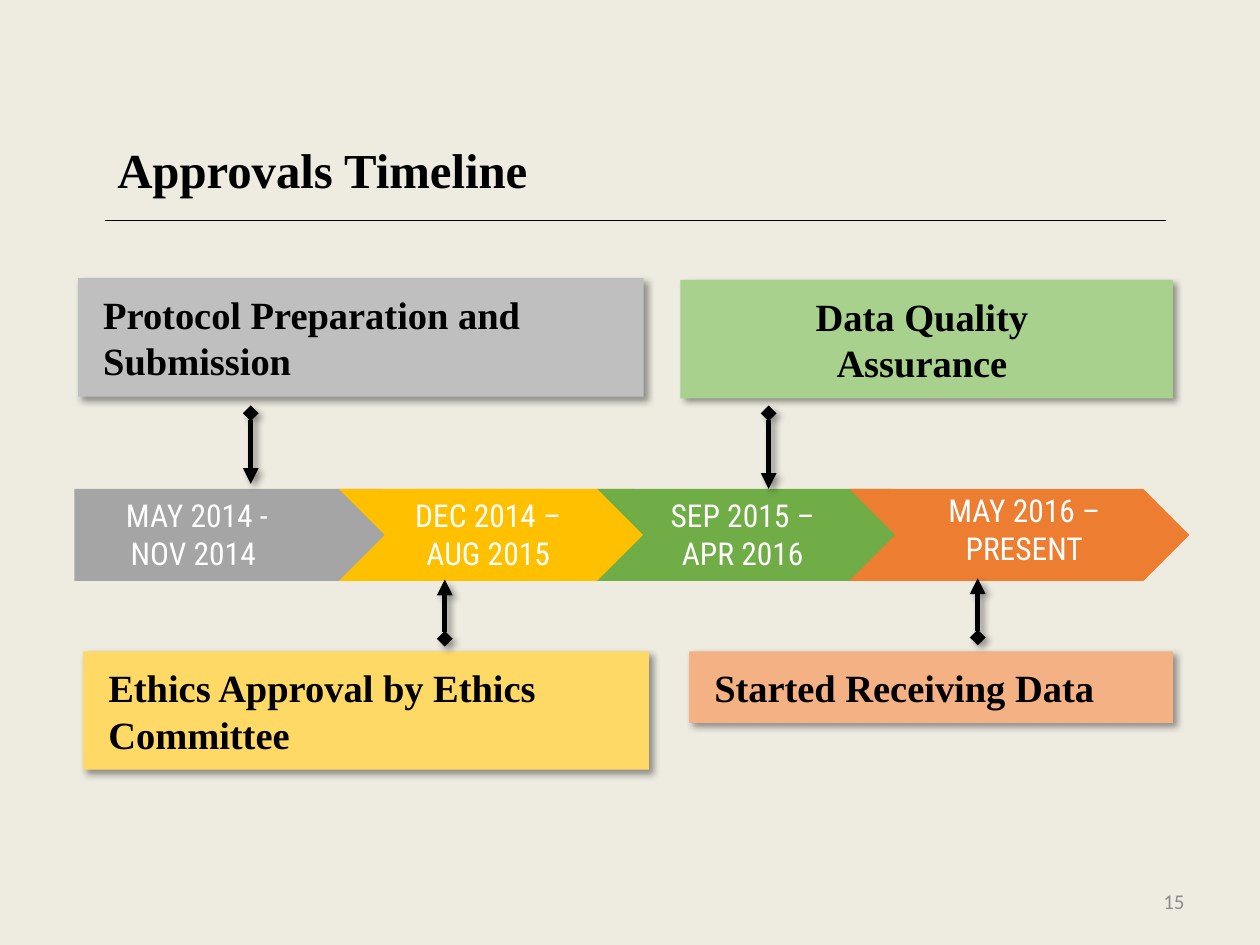
from typing import NamedTuple

from lxml.etree import SubElement
from pptx import Presentation
from pptx.dml.color import RGBColor
from pptx.enum.shapes import MSO_CONNECTOR as Connector, MSO_SHAPE as Preset
from pptx.enum.text import MSO_ANCHOR as Anchor, MSO_AUTO_SIZE as AutoSize, PP_ALIGN as Align
from pptx.oxml.ns import qn
from pptx.util import Pt

COLORS = {
    "paper": "EEECE1", "black": "000000", "white": "FFFFFF", "number": "8C8C8C",
    "gray": "A5A5A5", "gold": "FFC000", "green": "70AD47", "orange": "ED7D31",
    "light gray": "BFBFBF", "light gold": "FFD966",
    "light green": "A9D18E", "light orange": "F4B183",
}
SERIF, CONDENSED, SANS = "Times New Roman", "Roboto Condensed", "Calibri"
BAND_TOP, BAND_HEIGHT = 279.4, 52.6


class Phase(NamedTuple):
    left: float
    width: float
    preset: Preset
    color: str


class Label(NamedTuple):
    text: str
    left: float
    top: float
    width: float
    height: float


class Milestone(NamedTuple):
    lines: tuple[str, ...]
    left: float
    top: float
    width: float
    height: float
    color: str
    align: Align


class Arrow(NamedTuple):
    x: float
    start: float
    end: float


PHASES = [
    Phase(42.5, 202.3, Preset.PENTAGON, "gray"),
    Phase(193.7, 194.4, Preset.CHEVRON, "gold"),
    Phase(341.3, 194.4, Preset.CHEVRON, "green"),
    Phase(485.3, 194.4, Preset.CHEVRON, "orange"),
]
LABELS = [
    Label(" MAY 2014 - NOV 2014", 51.8, 280, 117.4, 51),
    Label("DEC 2014 – AUG 2015", 229, 280, 100, 51),
    Label("SEP 2015 – APR 2016", 371.5, 280, 105.8, 51),
    Label("MAY 2016 – PRESENT", 527, 277.2, 116.6, 72.7),
]
MILESTONES = [
    Milestone(("Protocol Preparation and Submission",),
              44.6, 159, 323.3, 67.7, "light gray", Align.LEFT),
    Milestone(("Ethics Approval by Ethics Committee",),
              47.5, 372.2, 323.3, 67.7, "light gold", Align.LEFT),
    Milestone(("Data Quality ", "Assurance "),
              388.8, 160, 281.5, 67.7, "light green", Align.CENTER),
    Milestone(("Started Receiving Data",),
              393.8, 372.2, 276.5, 41, "light orange", Align.LEFT),
]
ARROWS = [
    Arrow(143.3, 236.2, 276.5),
    Arrow(254.2, 365, 331.2),
    Arrow(558.7, 364.3, 330.5),
    Arrow(439.2, 236.2, 279.4),
]


def rgb(name: str) -> RGBColor:
    return RGBColor.from_string(COLORS[name])


def add_span(para, text: str, font: str, size: float, color: str, bold: bool = False) -> None:
    span = para.add_run()
    span.text = text
    span.font.name, span.font.size, span.font.bold = font, Pt(size), bold
    span.font.color.rgb = rgb(color)


def add_shadow(effects) -> None:
    shadow = SubElement(effects, qn("a:outerShdw"), blurRad=str(Pt(4)), dist=str(Pt(3)),
                        dir=str(45 * 60000), algn="tl", rotWithShape="0")
    tint = SubElement(shadow, qn("a:srgbClr"), val=COLORS["black"])
    SubElement(tint, qn("a:alpha"), val="40000")


def add_solid(page, preset: Preset, left: float, top: float, width: float, height: float,
              color: str):
    solid = page.shapes.add_shape(preset, Pt(left), Pt(top), Pt(width), Pt(height))
    solid.fill.solid()
    solid.fill.fore_color.rgb = rgb(color)
    solid.line.fill.background()
    solid.shadow.inherit = False
    return solid


def add_line(page, x1: float, y1: float, x2: float, y2: float, weight: float):
    line = page.shapes.add_connector(Connector.STRAIGHT, Pt(x1), Pt(y1), Pt(x2), Pt(y2))
    line.line.color.rgb = rgb("black")
    line.line.width = Pt(weight)
    effects = SubElement(line._element.spPr, qn("a:effectLst"))
    return line, effects


def add_arrow(page, arrow: Arrow) -> None:
    line, effects = add_line(page, arrow.x, arrow.start, arrow.x, arrow.end, 3)
    stroke = line._element.spPr.find(qn("a:ln"))
    SubElement(stroke, qn("a:headEnd"), type="diamond")
    SubElement(stroke, qn("a:tailEnd"), type="triangle")
    add_shadow(effects)


def add_milestone(page, item: Milestone) -> None:
    box = add_solid(page, Preset.RECTANGLE, item.left, item.top, item.width, item.height,
                    item.color)
    add_shadow(box._element.spPr.find(qn("a:effectLst")))
    frame = box.text_frame
    frame.word_wrap = True
    frame.vertical_anchor = Anchor.MIDDLE
    frame.margin_left = frame.margin_right = Pt(14.4)
    frame.margin_top = frame.margin_bottom = Pt(7.2)
    for index, text in enumerate(item.lines):
        para = frame.add_paragraph() if index else frame.paragraphs[0]
        para.alignment = item.align
        add_span(para, text, SERIF, 22, "black", bold=True)


def add_label(page, label: Label, font: str, size: float, color: str, align: Align,
              anchor: Anchor) -> None:
    box = page.shapes.add_textbox(Pt(label.left), Pt(label.top), Pt(label.width),
                                  Pt(label.height))
    frame = box.text_frame
    frame.word_wrap = True
    frame.vertical_anchor = anchor
    para = frame.paragraphs[0]
    para.alignment = align
    add_span(para, label.text, font, size, color)


def add_title(page, text: str) -> None:
    title = page.shapes.title
    title.left, title.top, title.width, title.height = Pt(59.8), Pt(85), Pt(612), Pt(48.2)
    frame = title.text_frame
    frame.auto_size = AutoSize.NONE
    frame.vertical_anchor = Anchor.BOTTOM
    frame.margin_top, frame.margin_bottom = Pt(0), Pt(20)
    para = frame.paragraphs[0]
    para.alignment = Align.LEFT
    add_span(para, text, SERIF, 27.9, "black", bold=True)


def main() -> None:
    deck = Presentation()
    deck.slide_width, deck.slide_height = Pt(720), Pt(540)
    page = deck.slides.add_slide(deck.slide_layouts[5])
    page.background.fill.solid()
    page.background.fill.fore_color.rgb = rgb("paper")

    # Heading, rule and page number
    add_line(page, 59.8, 126, 666, 126, 0.75)
    add_title(page, "Approvals Timeline")
    add_label(page, Label("15", 516.2, 500.4, 167.8, 28.8), SANS, 12, "number",
              Align.RIGHT, Anchor.MIDDLE)

    # Timeline band
    for phase in PHASES:
        add_solid(page, phase.preset, phase.left, BAND_TOP, phase.width, BAND_HEIGHT,
                  phase.color)

    # Milestones, their arrows and the dates
    for milestone in MILESTONES:
        add_milestone(page, milestone)
    for arrow in ARROWS:
        add_arrow(page, arrow)
    for label in LABELS:
        add_label(page, label, CONDENSED, 18, "white", Align.CENTER, Anchor.TOP)

    deck.save("out.pptx")


if __name__ == "__main__":
    main()
